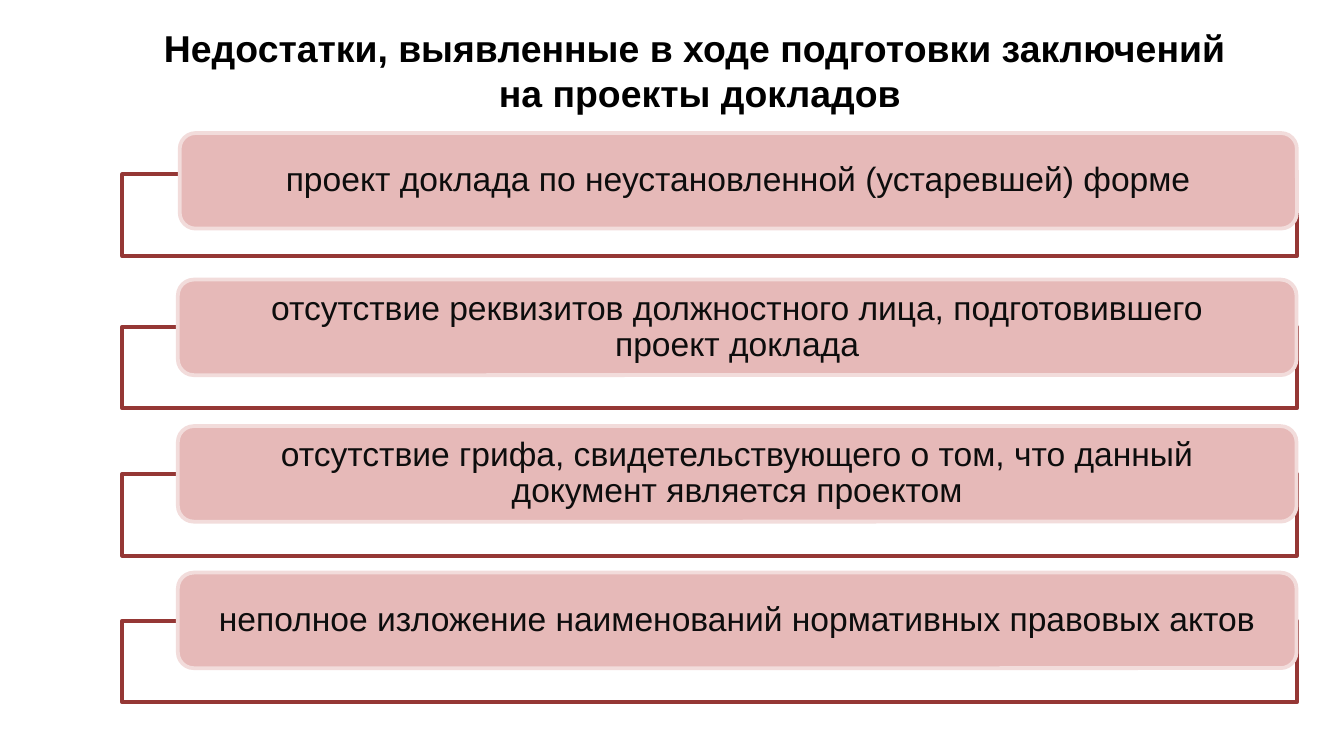
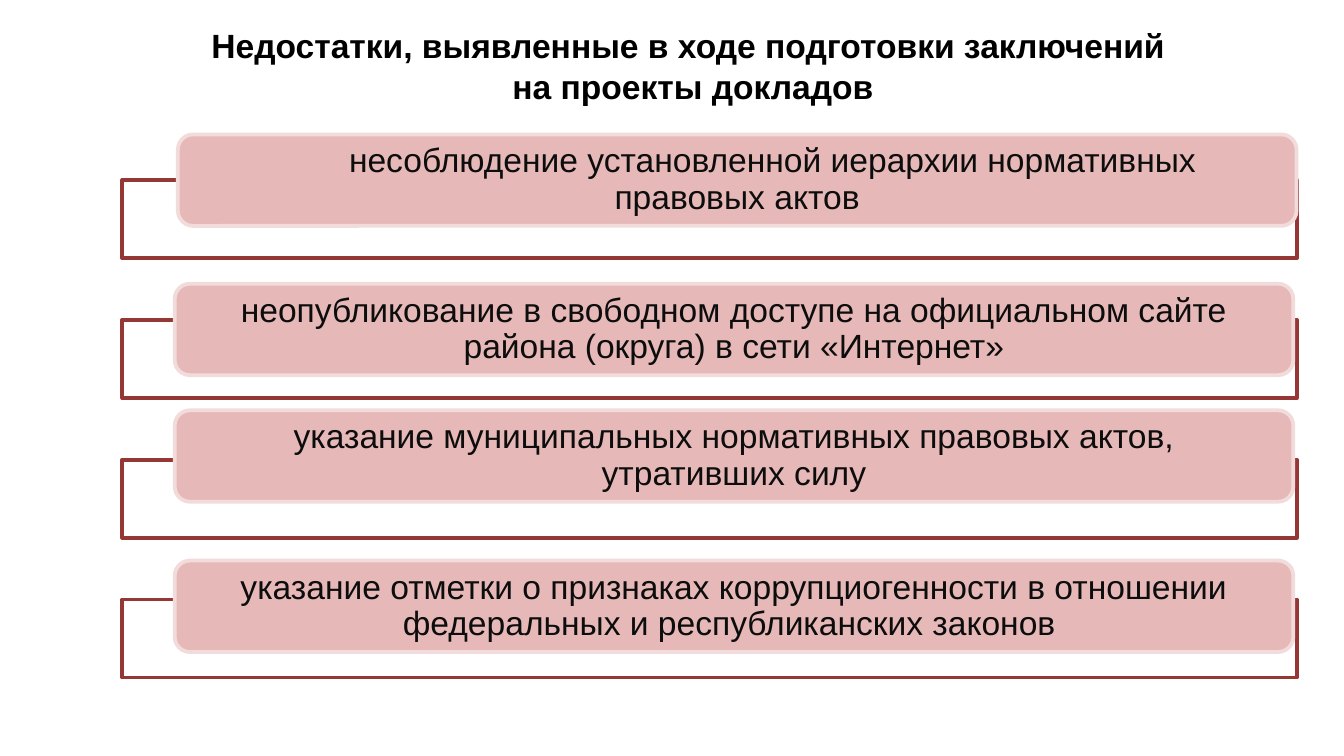
from lxml.etree import SubElement
from pptx import Presentation
from pptx.dml.color import RGBColor
from pptx.enum.shapes import MSO_SHAPE
from pptx.enum.text import MSO_ANCHOR, MSO_AUTO_SIZE, PP_ALIGN
from pptx.oxml.ns import qn
from pptx.util import Pt

BLACK = RGBColor(0x00, 0x00, 0x00)
INK = RGBColor(0x0D, 0x0D, 0x0D)
WHITE = RGBColor(0xFF, 0xFF, 0xFF)
DARK_RED = RGBColor(0x95, 0x37, 0x35)
PINK = RGBColor(0xE6, 0xB9, 0xB8)
PALE_PINK = RGBColor(0xF2, 0xDC, 0xDB)

FONT = "Arial"
TITLE_LINES = ("Недостатки, выявленные в ходе подготовки заключений ", "на проекты докладов")
FRAME_LEFT, FRAME_WIDTH = 65.5, 629.3
CARD_PADDING = 19


def write_text(frame, *lines, size=18, color=INK, bold=False, spacing=1.0, indent=0):
    frame.word_wrap = True
    for number, line in enumerate(lines):
        paragraph = frame.add_paragraph() if number else frame.paragraphs[0]
        paragraph.alignment = PP_ALIGN.CENTER
        paragraph.line_spacing = spacing
        if indent:
            paragraph._p.get_or_add_pPr().set("indent", str(Pt(indent)))
        run = paragraph.add_run()
        run.text = line
        font = run.font
        font.name, font.size, font.bold = FONT, Pt(size), bold
        font.color.rgb = color


class Deck:
    """Holds the shared style and the slide being built."""

    def __init__(self):
        self.presentation = Presentation()
        self.presentation.slide_width = Pt(720)
        self.presentation.slide_height = Pt(405)
        self.slide = None

    def start_slide(self, left, width, height, size):
        self.slide = self.presentation.slides.add_slide(self.presentation.slide_layouts[5])
        title = self.slide.shapes.title
        title.left, title.top, title.width, title.height = Pt(left), Pt(10), Pt(width), Pt(height)
        frame = title.text_frame
        frame.auto_size = MSO_AUTO_SIZE.SHAPE_TO_FIT_TEXT
        frame.vertical_anchor = MSO_ANCHOR.TOP
        write_text(frame, *TITLE_LINES, size=size, color=BLACK, bold=True)

    def box(self, preset, left, top, width, height, fill, line):
        shape = self.slide.shapes.add_shape(preset, Pt(left), Pt(top), Pt(width), Pt(height))
        shape.shadow.inherit = False
        shape.fill.solid()
        shape.fill.fore_color.rgb = fill
        shape.line.color.rgb = line
        shape.line.width = Pt(2)
        return shape

    def frame(self, top, height):
        shape = self.box(MSO_SHAPE.RECTANGLE, FRAME_LEFT, top, FRAME_WIDTH, height, WHITE, DARK_RED)
        color = shape._element.spPr.find(qn("a:solidFill"))[0]
        SubElement(color, qn("a:alpha")).set("val", "90000")

    def card(self, text, left, top, width, height, indent=0):
        shape = self.box(MSO_SHAPE.ROUNDED_RECTANGLE, left, top, width, height, PINK, PALE_PINK)
        frame = shape.text_frame
        frame.margin_left = frame.margin_right = Pt(CARD_PADDING)
        frame.margin_top = frame.margin_bottom = 0
        frame.vertical_anchor = MSO_ANCHOR.MIDDLE
        write_text(frame, text, spacing=0.9, indent=indent)

    def save(self):
        self.presentation.save("out.pptx")


def build_form_defects(deck):
    deck.start_slide(left=49, width=652, height=55.5, size=20)
    defects = (
        ("проект доклада по неустановленной (устаревшей) форме", 93.4, 96.3, 598.5),
        ("отсутствие реквизитов должностного лица, подготовившего проект доклада", 175, 95.3, 599.3),
        ("отсутствие грифа, свидетельствующего о том, что данный документ является проектом",
         253.9, 95.3, 599.3),
        ("неполное изложение наименований нормативных правовых актов", 332.5, 95.3, 599.3),
    )
    for row, (text, frame_top, left, width) in enumerate(defects):
        deck.frame(frame_top, 43.8)
        deck.card(text, left, 71.3 + row * 78.5, width, 51.2)


def build_legal_act_defects(deck):
    deck.start_slide(left=42.5, width=657.5, height=51, size=18)
    defects = (
        ("несоблюдение установленной иерархии нормативных правовых актов", 95.3, 72, 38),
        ("неопубликование в свободном доступе на официальном сайте района (округа) "
         "в сети «Интернет»", 93.6, 152, 0),
        ("указание муниципальных нормативных правовых актов, утративших силу", 93.6, 219.8, 0),
        ("указание отметки о признаках коррупциогенности в отношении федеральных "
         "и республиканских законов ", 93.6, 300.3, 0),
    )
    for row, (text, left, top, indent) in enumerate(defects):
        deck.frame(96.5 + row * 74.9, 41.8)
        deck.card(text, left, top, 599.3, 49, indent)


def main():
    deck = Deck()
    build_form_defects(deck)
    build_legal_act_defects(deck)
    deck.save()


if __name__ == "__main__":
    main()
